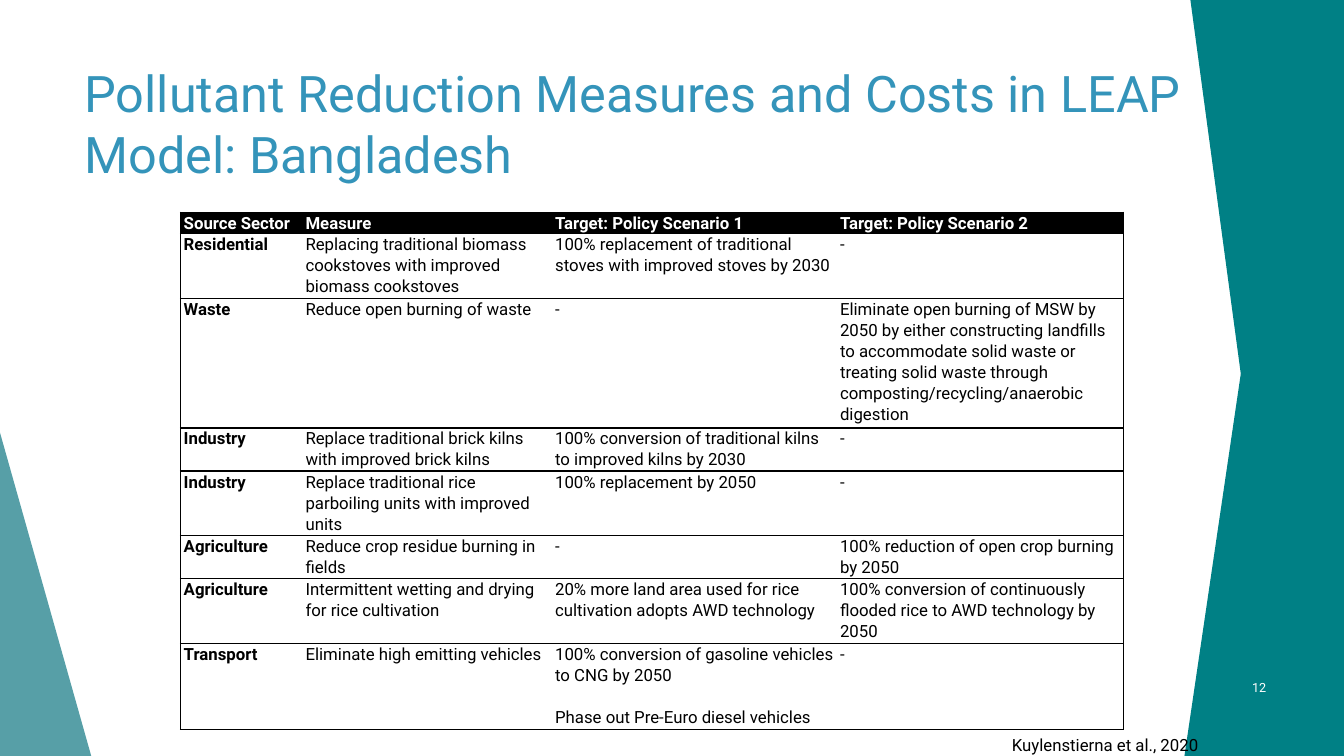
"""Build the slide on pollutant reduction measures in Bangladesh."""
from lxml.etree import SubElement
from pptx import Presentation
from pptx.dml.color import RGBColor
from pptx.enum.shapes import MSO_SHAPE
from pptx.enum.text import MSO_ANCHOR, PP_ALIGN
from pptx.oxml import parse_xml
from pptx.oxml.ns import nsdecls, qn
from pptx.util import Cm, Pt

FONT = "Roboto"
BLACK = RGBColor(0x00, 0x00, 0x00)
WHITE = RGBColor(0xFF, 0xFF, 0xFF)
TITLE_BLUE = RGBColor(0x34, 0x94, 0xBA)
TEAL = RGBColor(0x00, 0x80, 0x85)
PALE_TEAL = RGBColor(0x3A, 0x8F, 0x98)

TITLE = "Pollutant Reduction Measures and Costs in LEAP Model: Bangladesh"
CITATION = "Kuylenstierna et al., 2020"
PAGE_NUMBER = "12"

MEASURES = [
    ("Source Sector", "Measure", "Target: Policy Scenario 1", "Target: Policy Scenario 2"),
    ("Residential", "Replacing traditional biomass cookstoves with improved biomass cookstoves",
     "100% replacement of traditional stoves with improved stoves by 2030", "-"),
    ("Waste", "Reduce open burning of waste", "-",
     "Eliminate open burning of MSW by 2050 by either constructing landfills to accommodate "
     "solid waste or treating solid waste through composting/recycling/anaerobic digestion"),
    ("Industry", "Replace traditional brick kilns with improved brick kilns",
     "100% conversion of traditional kilns to improved kilns by 2030", "-"),
    ("Industry", "Replace traditional rice parboiling units with improved units",
     "100% replacement by 2050", "-"),
    ("Agriculture", "Reduce crop residue burning in fields", "-",
     "100% reduction of open crop burning by 2050"),
    ("Agriculture", "Intermittent wetting and drying for rice cultivation",
     "20% more land area used for rice cultivation adopts AWD technology",
     "100% conversion of continuously flooded rice to AWD technology by 2050"),
    ("Transport", "Eliminate high emitting vehicles",
     "100% conversion of gasoline vehicles to CNG by 2050\nPhase out Pre-Euro diesel vehicles", "-"),
]
LINES_PER_ROW = [1, 3, 6, 2, 3, 2, 3, 4]
LINE_HEIGHT = 0.53
COLUMN_WIDTHS = [3.07, 6.29, 7.18, 7.23]
TABLE_LEFT, TABLE_TOP = 4.55, 5.35
RIGHT_BAND = [(33.87, 0), (33.87, 19.05), (29.85, 19.05), (31.27, 9.42), (30, 0)]


def style_text(paragraph, size, color, bold=False):
    font = paragraph.font
    font.name, font.size, font.bold = FONT, Pt(size), bold
    font.color.rgb = color


def fill_plain(shape, color):
    shape.shadow.inherit = False
    shape.fill.solid()
    shape.fill.fore_color.rgb = color
    shape.line.fill.background()


def add_text(slide, box, text, size, color, align=PP_ALIGN.LEFT, anchor=MSO_ANCHOR.TOP):
    frame = slide.shapes.add_textbox(*map(Cm, box)).text_frame
    frame.word_wrap = True
    frame.vertical_anchor = anchor
    paragraph = frame.paragraphs[0]
    paragraph.text = text
    paragraph.alignment = align
    style_text(paragraph, size, color)


def set_borders(cell, visible_sides):
    properties = cell._tc.get_or_add_tcPr()
    for position, side in enumerate("LRTB"):
        paint = (f'<a:solidFill><a:srgbClr val="{BLACK}"/></a:solidFill>'
                 if side in visible_sides else "<a:noFill/>")
        line = parse_xml(f'<a:ln{side} {nsdecls("a")} w="{Pt(1)}">{paint}</a:ln{side}>')
        properties.insert(position, line)


def add_decoration(slide):
    triangle = slide.shapes.add_shape(
        MSO_SHAPE.ISOSCELES_TRIANGLE, Cm(0), Cm(10.9), Cm(2.3), Cm(8.15))
    triangle.adjustments[0] = 0
    fill_plain(triangle, PALE_TEAL)
    color = triangle._element.spPr.find(qn("a:solidFill"))[0]
    SubElement(color, qn("a:alpha"), val="85000")

    points = [(Cm(x), Cm(y)) for x, y in RIGHT_BAND]
    builder = slide.shapes.build_freeform(*points[0])
    builder.add_line_segments(points[1:], close=True)
    fill_plain(builder.convert_to_shape(), TEAL)


def add_measures_table(slide):
    frame = slide.shapes.add_table(
        len(MEASURES), len(COLUMN_WIDTHS), Cm(TABLE_LEFT), Cm(TABLE_TOP),
        Cm(sum(COLUMN_WIDTHS)), Cm(sum(LINES_PER_ROW) * LINE_HEIGHT))
    table = frame.table
    table.horz_banding = False
    for column, width in zip(table.columns, COLUMN_WIDTHS):
        column.width = Cm(width)
    for row, lines in zip(table.rows, LINES_PER_ROW):
        row.height = Cm(lines * LINE_HEIGHT)

    last_column = len(COLUMN_WIDTHS) - 1
    for row_index, texts in enumerate(MEASURES):
        is_header = row_index == 0
        for column_index, text in enumerate(texts):
            cell = table.cell(row_index, column_index)
            cell.margin_left = cell.margin_right = Cm(0.08)
            cell.margin_top = cell.margin_bottom = 0
            if is_header:
                cell.fill.solid()
                cell.fill.fore_color.rgb = BLACK
            else:
                cell.fill.background()
            set_borders(cell, "TB" + "L" * (column_index == 0) + "R" * (column_index == last_column))
            cell.text = text
            for index, paragraph in enumerate(cell.text_frame.paragraphs):
                paragraph.line_spacing = 1.07
                if index:
                    paragraph.space_before = Pt(15)
                style_text(paragraph, 12, WHITE if is_header else BLACK,
                           is_header or column_index == 0)


def main():
    presentation = Presentation()
    presentation.slide_width, presentation.slide_height = Cm(33.87), Cm(19.05)
    slide = presentation.slides.add_slide(presentation.slide_layouts[6])
    add_decoration(slide)
    add_text(slide, (1.88, 1.45, 30.28, 3.66), TITLE, 36, TITLE_BLUE)
    add_measures_table(slide)
    add_text(slide, (25.25, 18.39, 7.16, 0.76), CITATION, 12, BLACK)
    add_text(slide, (30.25, 16.81, 1.91, 1.02), PAGE_NUMBER, 9, WHITE,
             PP_ALIGN.RIGHT, MSO_ANCHOR.MIDDLE)
    presentation.save("out.pptx")


if __name__ == "__main__":
    main()
